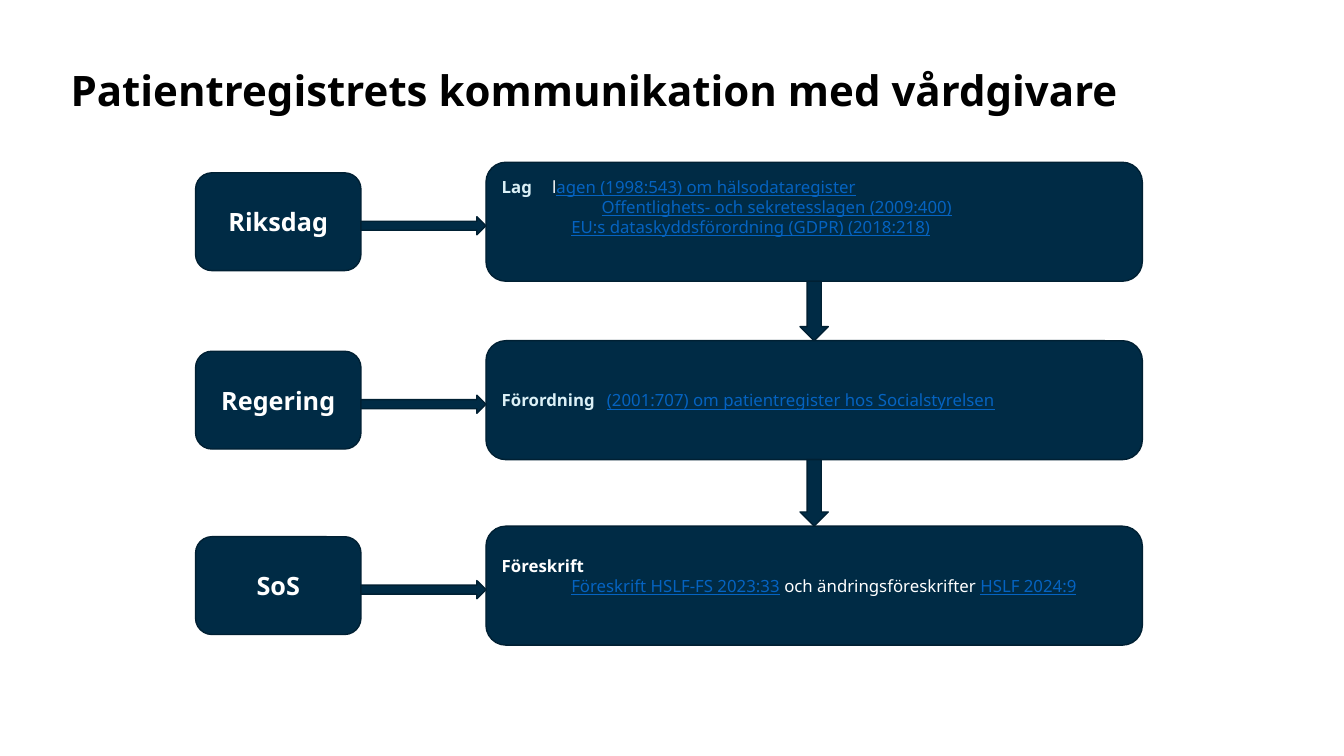
from pptx import Presentation
from pptx.dml.color import RGBColor
from pptx.enum.shapes import MSO_SHAPE as Shape
from pptx.enum.text import MSO_ANCHOR as Anchor, PP_ALIGN as Align
from pptx.oxml.ns import qn
from pptx.util import Inches, Pt
from lxml.etree import SubElement

FONT = "Noto Sans"
COLORS = {"navy": "002B45", "edge": "002033", "white": "FFFFFF",
          "pale": "DBF0F6", "link": "0563C1", "black": "000000"}
ROW_CENTERS = (2.2, 3.97, 5.81)
ACTOR_LEFT, ACTOR_WIDTH, ACTOR_HEIGHT = 1.94, 1.64, 0.97
RULE_LEFT, RULE_WIDTH, RULE_HEIGHT = 4.82, 6.51, 1.18
TAB = 0.69
DEEP_INDENT = 0.99

LAWS = [
    (0, [("Lag\t", "pale"), ("l", "white"),
         ("agen (1998:543) om hälsodataregister", "link")]),
    (DEEP_INDENT, [("Offentlighets- och sekretesslagen (2009:400)", "link")]),
    (TAB, [("EU:s dataskyddsförordning (GDPR) (2018:218)", "link")]),
]
ORDINANCE = [
    (0, [("Förordning\t ", "pale"),
         ("(2001:707) om patientregister hos Socialstyrelsen", "link")]),
]
REGULATIONS = [
    (0, [("Föreskrift", "white")]),
    (TAB, [("Föreskrift HSLF-FS 2023:33", "link"),
           (" och ändringsföreskrifter ", "white"),
           ("HSLF 2024:9", "link")]),
]
LEVELS = [("Riksdag", LAWS, 0.35), ("Regering", ORDINANCE, 0.05),
          ("SoS", REGULATIONS, 0.25)]


def rgb(name):
    return RGBColor.from_string(COLORS[name])


def style(font, size, color, bold=False):
    font.name, font.size, font.bold = FONT, Pt(size), bold
    font.color.rgb = rgb(color)


def add_block(slide, kind, left, top, width, height):
    block = slide.shapes.add_shape(
        kind, Inches(left), Inches(top), Inches(width), Inches(height))
    block.shadow.inherit = False
    block.fill.solid()
    block.fill.fore_color.rgb = rgb("navy")
    block.line.color.rgb = rgb("edge")
    block.line.width = Pt(1)
    return block


def set_layout(paragraph, indent):
    paragraph.alignment = Align.LEFT
    properties = paragraph._p.get_or_add_pPr()
    properties.set("marL", str(Inches(indent)))
    properties.set("indent", "0")
    stops = SubElement(properties, qn("a:tabLst"))
    for position in (TAB, 7.75):
        SubElement(stops, qn("a:tab"), pos=str(Inches(position)), algn="l")


def add_title(slide, text):
    title = slide.shapes.add_textbox(
        Inches(0.7), Inches(0.59), Inches(10.63), Inches(1.18)).text_frame
    title.word_wrap = True
    title.margin_left = title.margin_top = title.margin_right = 0
    heading = title.paragraphs[0]
    heading.text = text
    heading.line_spacing = 1.1
    style(heading.font, 30, "black", True)


def add_actor(slide, name, center):
    frame = add_block(slide, Shape.ROUNDED_RECTANGLE, ACTOR_LEFT,
                      center - ACTOR_HEIGHT / 2, ACTOR_WIDTH,
                      ACTOR_HEIGHT).text_frame
    frame.word_wrap = True
    frame.vertical_anchor = Anchor.MIDDLE
    label = frame.paragraphs[0]
    label.text = name
    label.alignment = Align.CENTER
    style(label.font, 18, "white", True)


def add_rule(slide, lines, center, bottom_margin):
    frame = add_block(slide, Shape.ROUNDED_RECTANGLE, RULE_LEFT,
                      center - RULE_HEIGHT / 2, RULE_WIDTH,
                      RULE_HEIGHT).text_frame
    frame.word_wrap = True
    frame.vertical_anchor = Anchor.MIDDLE
    frame.margin_bottom = Inches(bottom_margin)
    for number, (indent, parts) in enumerate(lines):
        line = frame.paragraphs[0] if number == 0 else frame.add_paragraph()
        set_layout(line, indent)
        for position, (text, color) in enumerate(parts):
            part = line.add_run()
            part.text = text
            style(part.font, 12, color, number == position == 0)
            part.font.underline = color == "link"


def main():
    deck = Presentation()
    deck.slide_width, deck.slide_height = Inches(13.33), Inches(7.5)
    slide = deck.slides.add_slide(deck.slide_layouts[6])
    add_title(slide, "Patientregistrets kommunikation med vårdgivare")

    arrow_left = ACTOR_LEFT + ACTOR_WIDTH
    for center, (actor, lines, bottom_margin) in zip(ROW_CENTERS, LEVELS):
        add_rule(slide, lines, center, bottom_margin)
        add_actor(slide, actor, center)
        add_block(slide, Shape.RIGHT_ARROW, arrow_left, center - 0.05,
                  RULE_LEFT - arrow_left, 0.18)

    for upper, lower in zip(ROW_CENTERS, ROW_CENTERS[1:]):
        add_block(slide, Shape.DOWN_ARROW, RULE_LEFT + RULE_WIDTH / 2 - 0.14,
                  upper + RULE_HEIGHT / 2, 0.28, lower - upper - RULE_HEIGHT)
    deck.save("out.pptx")


if __name__ == "__main__":
    main()
